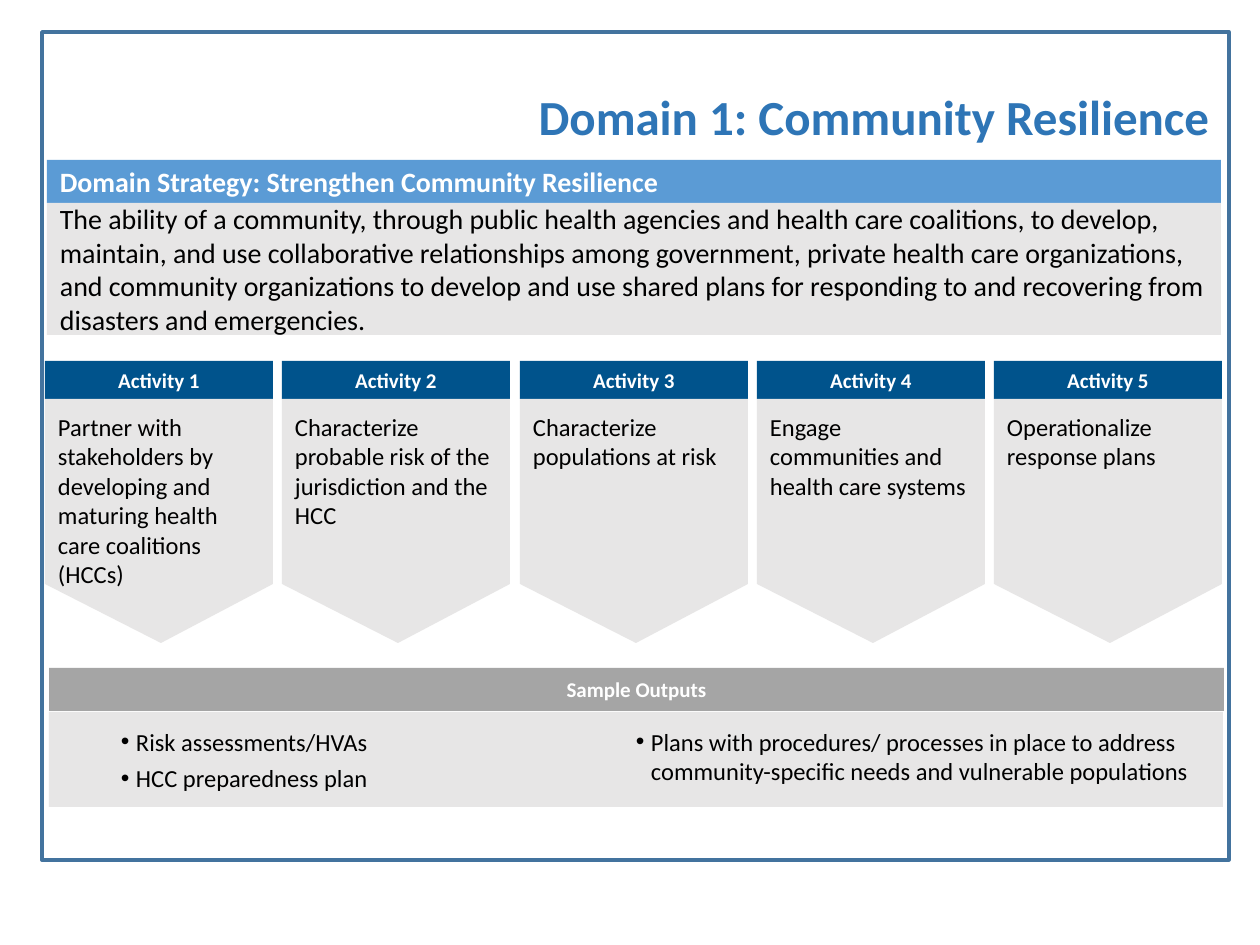
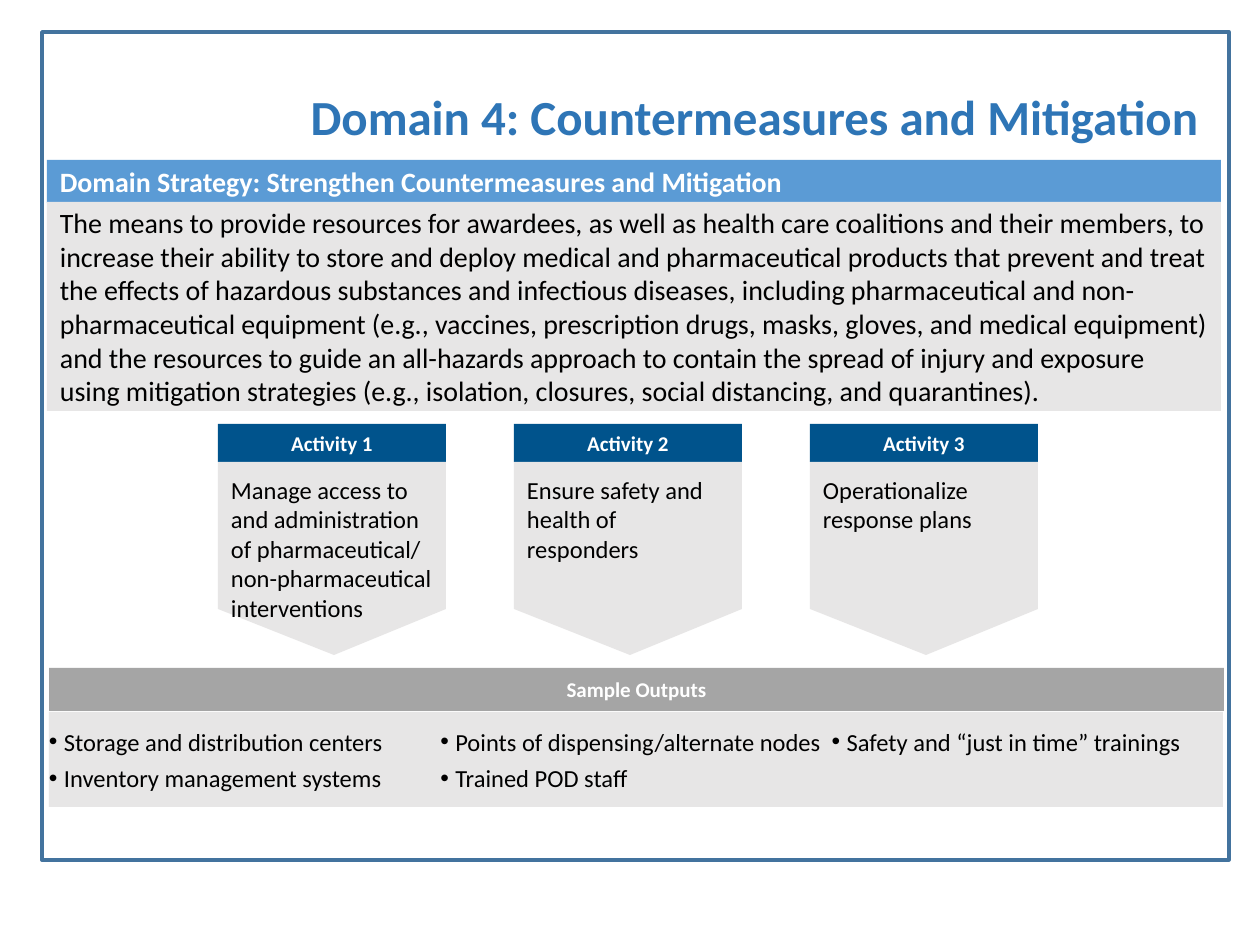
from lxml import etree
from pptx import Presentation
from pptx.dml.color import RGBColor
from pptx.enum.shapes import MSO_SHAPE
from pptx.enum.text import MSO_ANCHOR, PP_ALIGN
from pptx.oxml.ns import qn
from pptx.util import Emu, Pt

RECTANGLE = MSO_SHAPE.RECTANGLE
TOP, MIDDLE = MSO_ANCHOR.TOP, MSO_ANCHOR.MIDDLE
LEFT, CENTER, RIGHT = PP_ALIGN.LEFT, PP_ALIGN.CENTER, PP_ALIGN.RIGHT

EMU_PER_PX = 914400 / 126
FONT = "Calibri"
FRAME, TITLE, STRATEGY = "43739E", "2E75B6", "5B9BD5"
ACTIVITY, OUTPUTS, PANEL = "00538C", "A5A5A5", "E7E6E6"
WHITE, BLACK = "FFFFFF", "000000"

TITLE_TEXT = {"size": Pt(28), "bold": True, "color": TITLE}
STRATEGY_TEXT = {"size": Pt(16), "bold": True, "color": WHITE}
DEFINITION_TEXT = {"size": Pt(16), "color": BLACK}
HEADING_TEXT = {"size": Pt(12), "bold": True, "color": WHITE}
BODY_TEXT = {"size": Pt(14), "color": BLACK}

ACTIVITY_WIDTH, ACTIVITY_BAR_HEIGHT = 228, 38
TIP_OFFSET, SHOULDER_SHARE = 116, 0.76
BULLET_HANG = 15

DOMAINS = [
    {
        "title": "Domain 1: Community Resilience",
        "strategy": "Domain Strategy: Strengthen Community Resilience",
        "definition": "The ability of a community, through public health agencies and health care "
                      "coalitions, to develop, maintain, and use collaborative relationships among "
                      "government, private health care organizations, and community organizations to "
                      "develop and use shared plans for responding to and recovering from disasters "
                      "and emergencies.",
        "definition_box": (47, 203, 1174, 132),
        "activities": [
            "Partner with stakeholders by developing and maturing health care coalitions (HCCs)",
            "Characterize probable risk of the jurisdiction and the HCC",
            "Characterize populations at risk",
            "Engage communities and health care systems",
            "Operationalize response plans",
        ],
        "activity_span": (45, 994),
        "activity_rows": (361, 643),
        "output_columns": 2,
        "outputs": [
            ("Risk assessments/HVAs", 87),
            ("HCC preparedness plan", 87),
            ("Plans with procedures/ processes in place to address community-specific needs "
             "and vulnerable populations", BULLET_HANG),
        ],
    },
    {
        "title": "Domain 4: Countermeasures and Mitigation ",
        "strategy": "Domain Strategy: Strengthen Countermeasures and Mitigation",
        "definition": "The means to provide resources for awardees, as well as health care coalitions "
                      "and their members, to increase their ability to store and deploy medical and "
                      "pharmaceutical products that prevent and treat the effects of hazardous "
                      "substances and infectious diseases, including pharmaceutical and "
                      "non-pharmaceutical equipment (e.g., vaccines, prescription drugs, masks, "
                      "gloves, and medical equipment) and the resources to guide an all-hazards "
                      "approach to contain the spread of injury and exposure using mitigation "
                      "strategies (e.g., isolation, closures, social distancing, and quarantines).",
        "definition_box": (47, 202, 1174, 209),
        "activities": [
            "Manage access to and administration of pharmaceutical/ non-pharmaceutical interventions",
            "Ensure safety and health of responders",
            "Operationalize response plans",
        ],
        "activity_span": (218, 810),
        "activity_rows": (424, 655),
        "output_columns": 3,
        "outputs": [
            ("Storage and distribution centers", BULLET_HANG),
            ("Inventory management systems", BULLET_HANG),
            ("Points of dispensing/alternate nodes", BULLET_HANG),
            ("Trained POD staff", BULLET_HANG),
            ("Safety and “just in time” trainings", BULLET_HANG),
        ],
    },
]


def px(length):
    return Emu(round(length * EMU_PER_PX))


def rgb(value):
    return RGBColor.from_string(value)


def apply(target, values):
    for name, value in values.items():
        setattr(target, name, value)


def style_shape(shape, fill):
    shape.shadow.inherit = False
    shape.fill.solid()
    shape.fill.fore_color.rgb = rgb(fill)
    shape.line.fill.background()


def prepare_frame(shape, anchor, inset=13):
    frame = shape.text_frame
    margins = {f"margin_{side}": px(inset) for side in ("left", "top", "right", "bottom")}
    apply(frame, {"word_wrap": True, "vertical_anchor": anchor, **margins})
    return frame


def write(paragraph, text, text_format, align=LEFT):
    paragraph.alignment = align
    run = paragraph.add_run()
    run.text = text
    values = dict(text_format, name=FONT)
    run.font.color.rgb = rgb(values.pop("color"))
    apply(run.font, values)


def add_panel(slide, box, fill):
    panel = slide.shapes.add_shape(RECTANGLE, *map(px, box))
    style_shape(panel, fill)
    return panel


def add_label(slide, box, fill, text, text_format, align=LEFT):
    frame = prepare_frame(add_panel(slide, box, fill), MIDDLE)
    write(frame.paragraphs[0], text, text_format, align)


def add_page_frame(slide):
    border = slide.shapes.add_shape(RECTANGLE, *map(px, (42, 32, 1187, 828)))
    border.shadow.inherit = False
    border.fill.background()
    border.line.color.rgb = rgb(FRAME)
    border.line.width = Pt(2)


def add_title(slide, text):
    title = slide.shapes.add_textbox(*map(px, (48, 53, 1174, 125)))
    write(prepare_frame(title, MIDDLE).paragraphs[0], text, TITLE_TEXT, RIGHT)


def add_activity_arrow(slide, left, top, tip, text):
    right = left + ACTIVITY_WIDTH
    shoulder = round(top + (tip - top) * SHOULDER_SHARE)
    outline = slide.shapes.build_freeform(left, top, scale=EMU_PER_PX)
    outline.add_line_segments(
        [(right, top), (right, shoulder), (left + TIP_OFFSET, tip), (left, shoulder)], close=True)
    arrow = outline.convert_to_shape()
    style_shape(arrow, PANEL)
    write(prepare_frame(arrow, TOP).paragraphs[0], text, BODY_TEXT)


def add_activities(slide, activities, span, rows):
    first, last = span
    top, tip = rows
    pitch = (last - first) / (len(activities) - 1)
    for index, activity in enumerate(activities):
        left = round(first + index * pitch)
        add_label(slide, (left, top, ACTIVITY_WIDTH, ACTIVITY_BAR_HEIGHT), ACTIVITY,
                  f"Activity {index + 1}", HEADING_TEXT, CENTER)
        add_activity_arrow(slide, left, top + ACTIVITY_BAR_HEIGHT, tip, activity)


def add_bullet(paragraph, indent):
    properties = paragraph._p.get_or_add_pPr()
    properties.set("marL", str(px(indent)))
    properties.set("indent", str(-px(BULLET_HANG)))
    etree.SubElement(properties, qn("a:buFont")).set("typeface", "Arial")
    etree.SubElement(properties, qn("a:buChar")).set("char", "•")


def add_outputs(slide, outputs, columns):
    frame = prepare_frame(add_panel(slide, (49, 712, 1174, 95), PANEL), MIDDLE, inset=0)
    frame._txBody.bodyPr.set("numCol", str(columns))
    for index, (output, indent) in enumerate(outputs):
        paragraph = frame.add_paragraph() if index else frame.paragraphs[0]
        add_bullet(paragraph, indent)
        if index:
            paragraph.space_before = Pt(4)
        write(paragraph, output, BODY_TEXT)
    add_label(slide, (49, 668, 1175, 43), OUTPUTS, "Sample Outputs", HEADING_TEXT, CENTER)


def add_domain_slide(deck, domain):
    slide = deck.slides.add_slide(deck.slide_layouts[6])
    add_page_frame(slide)
    add_title(slide, domain["title"])
    add_label(slide, (47, 160, 1174, 43), STRATEGY, domain["strategy"], STRATEGY_TEXT)
    add_label(slide, domain["definition_box"], PANEL, domain["definition"], DEFINITION_TEXT)
    add_activities(slide, domain["activities"], domain["activity_span"], domain["activity_rows"])
    add_outputs(slide, domain["outputs"], domain["output_columns"])


def main():
    deck = Presentation()
    apply(deck, {"slide_width": px(1260), "slide_height": px(945)})
    for domain in DOMAINS:
        add_domain_slide(deck, domain)
    deck.save("out.pptx")


if __name__ == "__main__":
    main()
